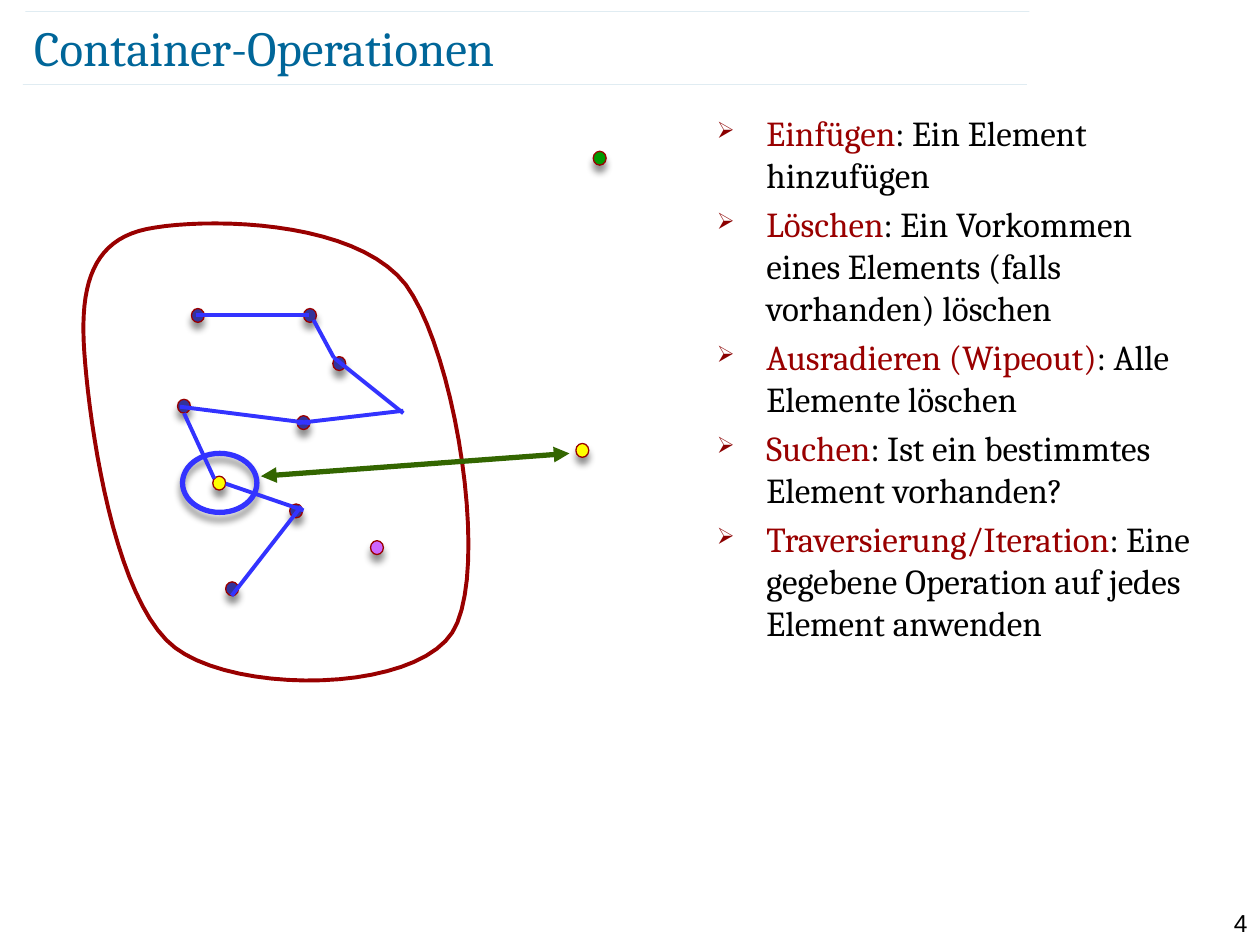
from typing import NamedTuple

from lxml import etree
from pptx import Presentation
from pptx import util as u
from pptx.dml.color import RGBColor
from pptx.enum import shapes, text
from pptx.oxml import ns

TEAL = RGBColor(0x00, 0x66, 0x99)
RED = RGBColor(0x99, 0x00, 0x00)
BLACK = RGBColor(0x00, 0x00, 0x00)
NAVY = RGBColor(0x33, 0x33, 0x99)
BLUE = RGBColor(0x33, 0x33, 0xFF)
YELLOW = RGBColor(0xFF, 0xFF, 0x00)
VIOLET = RGBColor(0xCC, 0x66, 0xFF)
GREEN = RGBColor(0x00, 0x99, 0x00)
DARK_GREEN = RGBColor(0x33, 0x66, 0x00)
SERIF = "Cambria"


class Point(NamedTuple):
    x: float
    y: float


class Element(NamedTuple):
    left: float
    top: float
    color: RGBColor = NAVY


class Link(NamedTuple):
    start: Point
    end: Point


class Operation(NamedTuple):
    name: str
    meaning: str


RULES = [Link(Point(0.46, 1.7), Point(20.7, 1.7)),
         Link(Point(0.51, 0.23), Point(20.75, 0.23))]
OPERATIONS = [
    Operation("Einfügen", ": Ein Element hinzufügen"),
    Operation("Löschen", ": Ein Vorkommen eines Elements (falls vorhanden) löschen"),
    Operation("Ausradieren (Wipeout)", ": Alle Elemente löschen"),
    Operation("Suchen", ": Ist ein bestimmtes Element vorhanden?"),
    Operation("Traversierung/Iteration",
              ": Eine gegebene Operation auf jedes Element anwenden"),
]
# Container outline: a start point, then two controls and an end per curve
OUTLINE = [Point(*xy) for xy in (
    (1.7, 7.11), (1.8, 8.53), (2.29, 12.12), (3.53, 13.06),
    (4.78, 14), (8.33, 13.97), (9.12, 12.75),
    (9.88, 11.53), (9.19, 7.11), (8.18, 5.74),
    (7.14, 4.39), (4.04, 4.39), (2.95, 4.62),
    (1.88, 4.85), (1.6, 5.72), (1.7, 7.11))]
ELEMENTS = [
    Element(3.86, 6.22), Element(4.55, 11.73), Element(6.12, 6.22),
    Element(3.58, 8.05), Element(6.71, 7.19), Element(5.84, 10.16),
    Element(4.29, 9.6, YELLOW), Element(5.99, 8.38),
    Element(7.47, 10.9, VIOLET), Element(11.96, 3.05, GREEN),
]
SOUGHT = Element(11.61, 8.94, YELLOW)
MATCH = Link(Point(11.48, 9.14), Point(5.26, 9.6))
TRAVERSAL = [
    Link(Point(3.96, 6.35), Point(6.22, 6.35)),
    Link(Point(6.32, 6.45), Point(6.73, 7.21)),
    Link(Point(6.73, 7.21), Point(8.13, 8.33)),
    Link(Point(5.99, 8.53), Point(8.13, 8.28)),
    Link(Point(3.63, 8.2), Point(6.25, 8.53)),
    Link(Point(3.71, 8.33), Point(4.32, 9.65)),
    Link(Point(4.55, 9.75), Point(6.12, 10.29)),
    Link(Point(6.07, 10.21), Point(4.67, 12.01)),
]


def sub(parent, tag: str, **attributes: str):
    return etree.SubElement(parent, ns.qn(tag), attributes)


def add_shadow(shape) -> None:
    shape.shadow.inherit = False
    effects = shape._element.spPr.find(ns.qn("a:effectLst"))
    shadow = sub(effects, "a:outerShdw", blurRad=str(u.Pt(4)), dist=str(u.Pt(4)),
                 dir="5400000", algn="ctr", rotWithShape="0")
    sub(sub(shadow, "a:srgbClr", val=str(BLACK)), "a:alpha", val="43000")


def add_line(slide, link: Link, color: RGBColor, width: float):
    line = slide.shapes.add_connector(
        shapes.MSO_CONNECTOR.STRAIGHT, *(u.Cm(v) for v in link.start + link.end))
    line.line.color.rgb = color
    line.line.width = u.Pt(width)
    sub(line._element.spPr, "a:effectLst")
    return line


def add_oval(slide, left: float, top: float, width: float, height: float,
             color: RGBColor, weight: float):
    oval = slide.shapes.add_shape(shapes.MSO_SHAPE.OVAL, u.Cm(left), u.Cm(top),
                                  u.Cm(width), u.Cm(height))
    oval.fill.background()
    oval.line.color.rgb = color
    oval.line.width = u.Pt(weight)
    add_shadow(oval)
    return oval


def add_element(slide, element: Element) -> None:
    dot = add_oval(slide, element.left, element.top, 0.26, 0.28, RED, 0.75)
    dot.fill.solid()
    dot.fill.fore_color.rgb = element.color


def add_container(slide, outline: list[Point], steps: int = 20) -> None:
    def on_curve(controls: list[Point], t: float) -> tuple[int, int]:
        s = 1 - t
        weights = (s ** 3, 3 * s * s * t, 3 * s * t * t, t ** 3)
        return (u.Cm(sum(w * p.x for w, p in zip(weights, controls))),
                u.Cm(sum(w * p.y for w, p in zip(weights, controls))))

    points = [on_curve(outline[first:first + 4], step / steps)
              for first in range(0, len(outline) - 1, 3) for step in range(steps)]
    builder = slide.shapes.build_freeform(*points[0])
    builder.add_line_segments(points[1:], close=True)
    container = builder.convert_to_shape()
    container.shadow.inherit = False
    container.fill.background()
    container.line.color.rgb = RED
    container.line.width = u.Pt(2.25)


def add_frame(slide, left: float, top: float, width: float, height: float):
    frame = slide.shapes.add_textbox(u.Cm(left), u.Cm(top),
                                     u.Cm(width), u.Cm(height)).text_frame
    frame.word_wrap = True
    return frame


def add_run(paragraph, words: str, size: float, color: RGBColor,
            font: str = SERIF) -> None:
    run = paragraph.add_run()
    run.text = words
    run.font.size = u.Pt(size)
    run.font.name = font
    run.font.color.rgb = color


def add_operations(slide, operations: list[Operation]) -> None:
    frame = add_frame(slide, 14.2, 2.13, 10.11, 15.6)
    for index, operation in enumerate(operations):
        paragraph = frame.paragraphs[0] if index == 0 else frame.add_paragraph()
        paragraph.space_before = u.Pt(4 if index else 0)
        properties = paragraph._p.get_or_add_pPr()
        properties.set("marL", str(u.Cm(1)))
        properties.set("indent", str(u.Cm(-1)))
        sub(sub(properties, "a:buClr"), "a:srgbClr", val="8B0000")
        sub(properties, "a:buSzPct", val="65000")
        sub(properties, "a:buChar", char="➢")
        add_run(paragraph, operation.name, 20, RED)
        add_run(paragraph, operation.meaning, 20, BLACK)


def main() -> None:
    deck = Presentation()
    deck.slide_width, deck.slide_height = u.Cm(25.4), u.Cm(19.05)
    slide = deck.slides.add_slide(deck.slide_layouts[6])

    # Page number and title between thin rules
    number = add_frame(slide, 24, 18.19, 1.4, 0.61).paragraphs[0]
    number.alignment = text.PP_ALIGN.RIGHT
    add_run(number, "4", 14, BLACK, "Arial")
    for rule in RULES:
        line = add_line(slide, rule, TEAL, 0.1)
        color = line.line._ln.find(".//" + ns.qn("a:srgbClr"))
        sub(color, "a:alpha", val="35000")
    title = add_frame(slide, 0.69, 0.33, 22.07, 1.22)
    title.margin_left = title.margin_right = title.margin_top = title.margin_bottom = 0
    title.vertical_anchor = text.MSO_ANCHOR.MIDDLE
    add_run(title.paragraphs[0], "Container-Operationen", 28, TEAL)

    # List of operations
    add_operations(slide, OPERATIONS)

    # Container with its elements
    add_container(slide, OUTLINE)
    for element in ELEMENTS:
        add_element(slide, element)

    # Search: arrow between the sought element and its ringed match
    arrow = add_line(slide, MATCH, DARK_GREEN, 3)
    for end in ("a:headEnd", "a:tailEnd"):
        sub(arrow.line._ln, end, type="triangle")
    add_oval(slide, 3.68, 9.14, 1.5, 1.19, BLUE, 3)

    # Traversal through the elements
    for link in TRAVERSAL:
        add_line(slide, link, BLUE, 2.25)
    add_element(slide, SOUGHT)

    deck.save("out.pptx")


if __name__ == "__main__":
    main()
